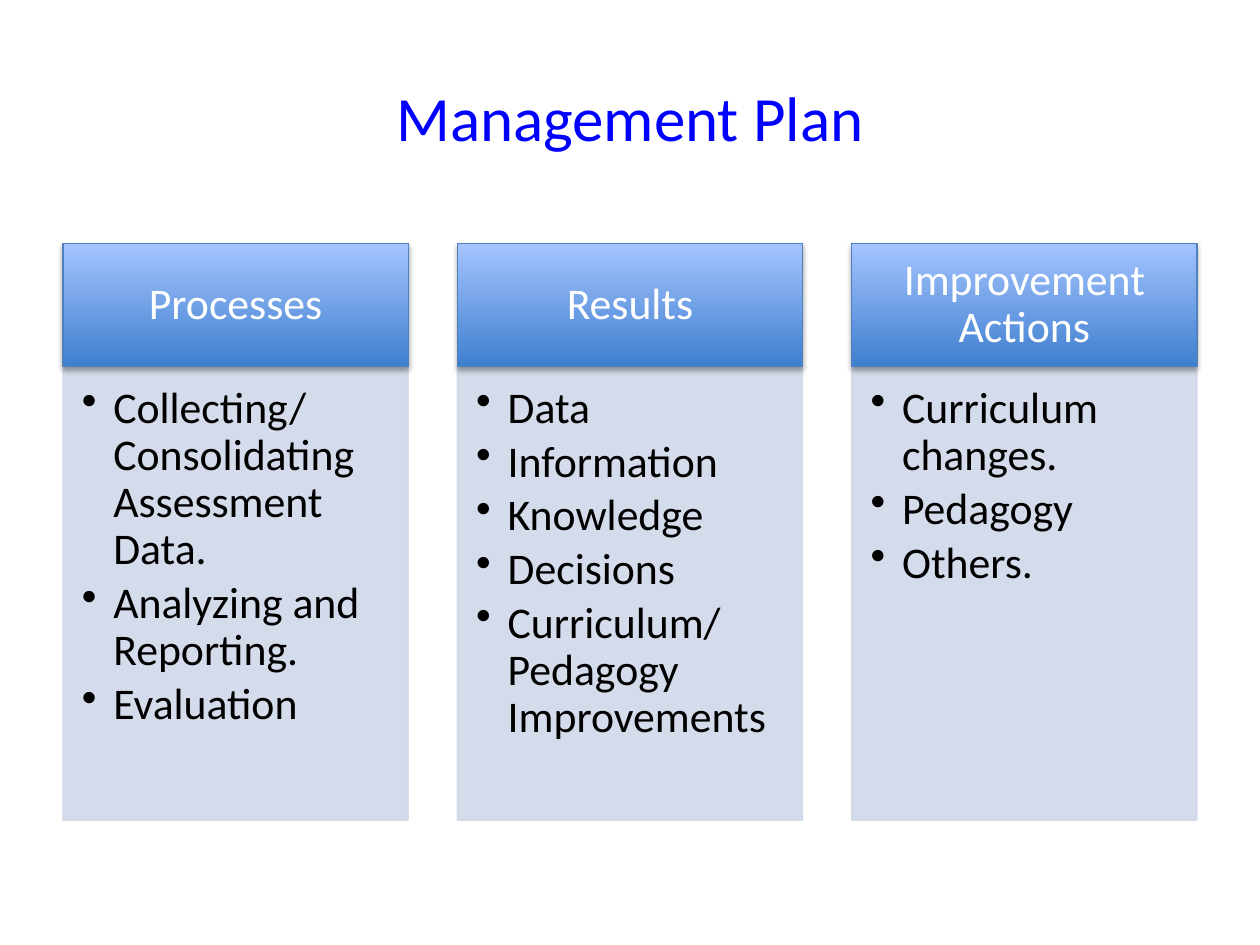
from pptx import Presentation
from pptx.dml.color import RGBColor
from pptx.enum.shapes import MSO_SHAPE
from pptx.enum.text import MSO_ANCHOR, PP_ALIGN
from pptx.oxml import parse_xml
from pptx.oxml.ns import nsdecls, qn
from pptx.util import Emu, Inches, Pt
from lxml.etree import SubElement

FONT = "Calibri"
COLORS = {
    "title": "0000FF",
    "low": "3F7FCE",
    "high": "A4C4FF",
    "edge": "4F81BD",
    "panel": "D0D8E8",
    "light": "FFFFFF",
    "dark": "000000",
}
PLAN = [
    ("Processes", ["Collecting/Consolidating Assessment Data.",
                   "Analyzing and Reporting.", "Evaluation"]),
    ("Results", ["Data", "Information", "Knowledge", "Decisions",
                 "Curriculum/Pedagogy Improvements"]),
    ("Improvement Actions", ["Curriculum changes.", "Pedagogy", "Others."]),
]


def color(name):
    return RGBColor.from_string(COLORS[name])


def add_run(para, text, size, tone):
    run = para.add_run()
    run.text = text
    run.font.name = FONT
    run.font.size = Pt(size)
    run.font.color.rgb = color(tone)


def add_rect(slide, box, edge, pads, anchor):
    """Add a plain rectangle with its line and text frame set."""
    rect = slide.shapes.add_shape(MSO_SHAPE.RECTANGLE, *box)
    rect.shadow.inherit = False
    rect.line.color.rgb = color(edge)
    rect.line.width = Pt(0.75)
    frame = rect.text_frame
    frame.word_wrap = True
    frame.vertical_anchor = anchor
    (frame.margin_left, frame.margin_top,
     frame.margin_right, frame.margin_bottom) = [Inches(pad) for pad in pads]
    return rect


def add_shadow(shape):
    effects = shape._element.spPr.find(qn("a:effectLst"))
    effects.append(parse_xml(
        f'<a:outerShdw {nsdecls("a")} blurRad="{Pt(3.1)}" dist="{Pt(1.8)}" '
        'dir="5400000" rotWithShape="0"><a:srgbClr val="000000">'
        '<a:alpha val="35000"/></a:srgbClr></a:outerShdw>'))


def add_bullet(para):
    props = para._p.get_or_add_pPr()
    props.set("marL", str(Inches(0.25)))
    props.set("indent", str(Inches(-0.25)))
    SubElement(props, qn("a:buChar")).set("char", "•")


def add_title(slide, box, text):
    title = slide.shapes.title
    title.left, title.top, title.width, title.height = box
    title.text_frame.vertical_anchor = MSO_ANCHOR.MIDDLE
    para = title.text_frame.paragraphs[0]
    para.alignment = PP_ALIGN.CENTER
    add_run(para, text, 36, "title")


def add_head(slide, box, text):
    head = add_rect(slide, box, "edge", (0.19, 0.11, 0.19, 0.11),
                    MSO_ANCHOR.MIDDLE)
    head.fill.gradient()
    head.fill.gradient_angle = 90
    for stop, tone in zip(head.fill.gradient_stops, ("low", "high")):
        stop.color.rgb = color(tone)
    add_shadow(head)
    para = head.text_frame.paragraphs[0]
    para.alignment = PP_ALIGN.CENTER
    para.line_spacing = 0.9
    para.space_after = Pt(8.75)
    add_run(para, text, 25, "light")


def add_list(slide, box, items):
    panel = add_rect(slide, box, "panel", (0.15, 0.15, 0.19, 0.22),
                     MSO_ANCHOR.TOP)
    panel.fill.solid()
    panel.fill.fore_color.rgb = color("panel")
    # Fill and line are both slightly see-through
    for tint in panel._element.spPr.iter(qn("a:srgbClr")):
        SubElement(tint, qn("a:alpha")).set("val", "90000")
    frame = panel.text_frame
    for i, item in enumerate(items):
        para = frame.add_paragraph() if i else frame.paragraphs[0]
        para.alignment = PP_ALIGN.LEFT
        para.line_spacing = 0.9
        para.space_after = Pt(3.75)
        add_bullet(para)
        add_run(para, item, 25, "dark")


def add_column(slide, box, head, items):
    left, top, width, height = box
    split = Inches(0.98)
    add_list(slide, (left, top + split, width, height - split), items)
    add_head(slide, (left, top, width, split), head)


def add_plan(slide, box, plan):
    """Spread the columns evenly over the box."""
    left, top, width, height = box
    wide = Inches(2.74)
    step = (width - wide) / (len(plan) - 1)
    for i, (head, items) in enumerate(plan):
        add_column(slide, (Emu(int(left + i * step)), top, wide, height),
                   head, items)


def main():
    deck = Presentation()
    deck.slide_width, deck.slide_height = Inches(10), Inches(7.5)
    slide = deck.slides.add_slide(deck.slide_layouts[5])
    # Title
    add_title(slide, [Inches(n) for n in (0.5, 0.3, 9, 1.25)],
              "Management Plan")
    # Three columns
    add_plan(slide, [Inches(n) for n in (0.5, 1.93, 9, 4.58)], PLAN)
    deck.save("out.pptx")


if __name__ == "__main__":
    main()
